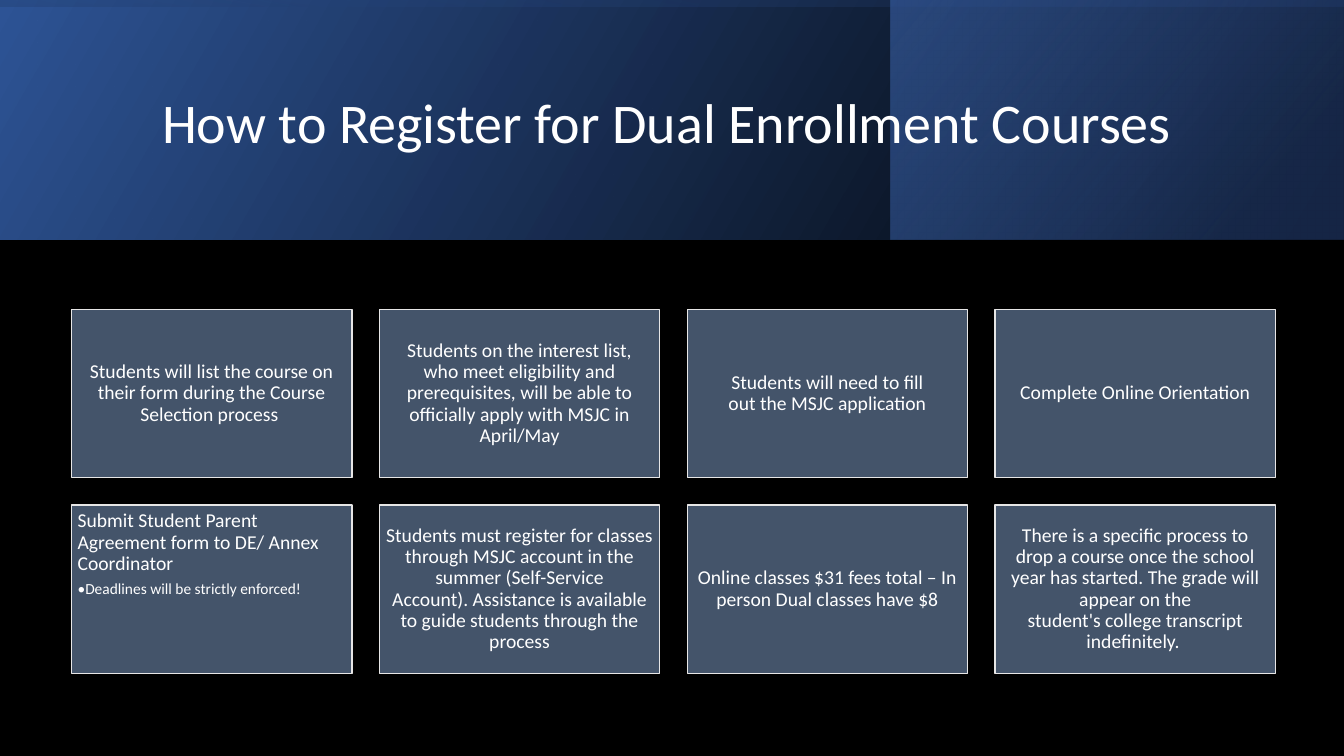
from lxml import etree
from pptx import Presentation
from pptx.dml.color import RGBColor
from pptx.enum.shapes import MSO_SHAPE
from pptx.enum.text import MSO_ANCHOR, PP_ALIGN
from pptx.oxml import parse_xml
from pptx.oxml.ns import nsdecls, qn
from pptx.util import Inches, Pt

RECTANGLE = MSO_SHAPE.RECTANGLE
MIDDLE, TOP = MSO_ANCHOR.MIDDLE, MSO_ANCHOR.TOP
CENTER, LEFT = PP_ALIGN.CENTER, PP_ALIGN.LEFT

COLORS = {
    "black": "000000",
    "white": "FFFFFF",
    "navy": "203864",
    "blue": "2F5597",
    "bright": "4472C4",
    "card": "44546A",
    "border": "E7E6E6",
}
FONT = "Calibri"
SLIDE_WIDTH, SLIDE_HEIGHT = 13.33, 7.5
BANNER_BOX = (0, 0, SLIDE_WIDTH, 2.38)
GRID_BOX = (0.71, 3.07, 11.94, 3.61)
COLUMNS = 4
CARD_WIDTH, CARD_HEIGHT = 2.78, 1.67
CARD_INSET = 0.06
TIE, HARD_SPACE = "~", chr(160)

TITLE = "How to Register for~Dual Enrollment Courses~~"
STEPS = [
    ["Students will list the course on their form during the~Course Selection~process~"],
    ["Students on the interest list, who~meet~eligibility and prerequisites,~will be~able "
     "to officially apply with MSJC in April/May"],
    ["Students will need~to fill out~the~MSJC~application"],
    ["Complete Online Orientation"],
    ["Submit~Student Parent Agreement form to DE/~Annex Coordinator",
     "Deadlines will be strictly enforced!"],
    ["Students must register for classes through MSJC~account in the summer (Self-Service "
     "Account).~Assistance is available to guide~students~through the process"],
    ["Online~classes $31 fees total – In person Dual classes have $8"],
    ["There is a specific~process to drop a~course once~the~school year has~started. The "
     "grade will appear on the student's~college~transcript indefinitely.~"],
]


def color(name):
    """Return the named colour."""
    return RGBColor.from_string(COLORS[name])


def apply_format(target, values):
    """Set each attribute of the target from a dict."""
    for name, value in values.items():
        setattr(target, name, value)


def write_text(paragraph, text, size):
    """Write white text with tight line spacing, turning ties into hard spaces."""
    paragraph.text = text.replace(TIE, HARD_SPACE)
    paragraph.line_spacing = 0.9
    apply_format(paragraph.font, {"name": FONT, "size": Pt(size)})
    paragraph.font.color.rgb = color("white")


def add_rectangle(slide, box):
    """Add a rectangle without shadow."""
    shape = slide.shapes.add_shape(RECTANGLE, *map(Inches, box))
    shape.shadow.inherit = False
    return shape


def add_gradient(slide, box, stops, angle, rotation=0):
    """Add a mirrored rectangle with a translucent linear gradient."""
    shape = add_rectangle(slide, box)
    shape.rotation = rotation
    shape.line.fill.background()
    shape.fill.background()
    properties = shape.element.spPr
    properties.find(qn("a:xfrm")).set("flipH", "1")
    stop_xml = "".join(
        f'<a:gs pos="{position * 1000}"><a:srgbClr val="{COLORS[name]}">'
        f'<a:alpha val="{opacity * 1000}"/></a:srgbClr></a:gs>'
        for position, name, opacity in stops)
    gradient = parse_xml(
        f'<a:gradFill {nsdecls("a")} rotWithShape="1"><a:gsLst>{stop_xml}</a:gsLst>'
        f'<a:lin ang="{angle * 60000}" scaled="0"/></a:gradFill>')
    properties.replace(properties.find(qn("a:noFill")), gradient)


def add_banner(slide, box):
    """Build the layered gradient banner and its title."""
    left, top, width, height = box
    add_gradient(slide, box, [(0, "black", 96), (100, "blue", 100)], 330)
    panel_width = 4.49
    add_gradient(slide, (left + width - panel_width - 0.01, top, panel_width, height),
                 [(19, "navy", 68), (100, "bright", 48)], 320)
    offset = (width - height) / 2
    add_gradient(slide, (left + offset, top - offset, height, width),
                 [(23, "blue", 16), (99, "black", 45)], 350, rotation=270)
    title_box = (left + 1.51, top + 0.38, 10.63, 1.72)
    title = slide.shapes.add_textbox(*map(Inches, title_box))
    apply_format(title.text_frame, {"word_wrap": True, "vertical_anchor": MIDDLE})
    write_text(title.text_frame.paragraphs[0], TITLE, 40)


def add_bullet(paragraph):
    """Give the paragraph a hanging bullet."""
    paragraph.level = 1
    properties = paragraph._p.get_or_add_pPr()
    properties.set("marL", str(Inches(CARD_INSET)))
    properties.set("indent", str(-Inches(CARD_INSET)))
    etree.SubElement(properties, qn("a:buFont")).set("typeface", FONT)
    etree.SubElement(properties, qn("a:buChar")).set("char", "•")


def add_card(slide, box, texts):
    """Build one step card, with any further texts as bullets."""
    card = add_rectangle(slide, box)
    card.fill.solid()
    card.fill.fore_color.rgb = color("card")
    card.line.color.rgb = color("border")
    card.line.width = Pt(1)
    frame = card.text_frame
    inset = Inches(CARD_INSET)
    has_bullets = len(texts) > 1
    apply_format(frame, {
        "word_wrap": True,
        "vertical_anchor": TOP if has_bullets else MIDDLE,
        "margin_left": inset, "margin_right": inset,
        "margin_top": inset, "margin_bottom": inset,
    })
    heading, *bullets = texts
    paragraph = frame.paragraphs[0]
    paragraph.alignment = LEFT if has_bullets else CENTER
    write_text(paragraph, heading, 14)
    for text in bullets:
        paragraph.space_after = Pt(5)
        paragraph = frame.add_paragraph()
        paragraph.alignment = LEFT
        add_bullet(paragraph)
        write_text(paragraph, text, 11)


def add_steps(slide, box):
    """Lay the step cards out in an even grid."""
    left, top, width, height = box
    column_pitch = (width - CARD_WIDTH) / (COLUMNS - 1)
    row_pitch = height - CARD_HEIGHT
    for index, texts in enumerate(STEPS):
        row, column = divmod(index, COLUMNS)
        card_box = (left + column * column_pitch, top + row * row_pitch,
                    CARD_WIDTH, CARD_HEIGHT)
        add_card(slide, card_box, texts)


def main():
    """Build and save the presentation."""
    presentation = Presentation()
    presentation.slide_width = Inches(SLIDE_WIDTH)
    presentation.slide_height = Inches(SLIDE_HEIGHT)
    slide = presentation.slides.add_slide(presentation.slide_layouts[6])
    slide.background.fill.solid()
    slide.background.fill.fore_color.rgb = color("black")
    add_banner(slide, BANNER_BOX)
    add_steps(slide, GRID_BOX)
    presentation.save("out.pptx")


if __name__ == "__main__":
    main()
